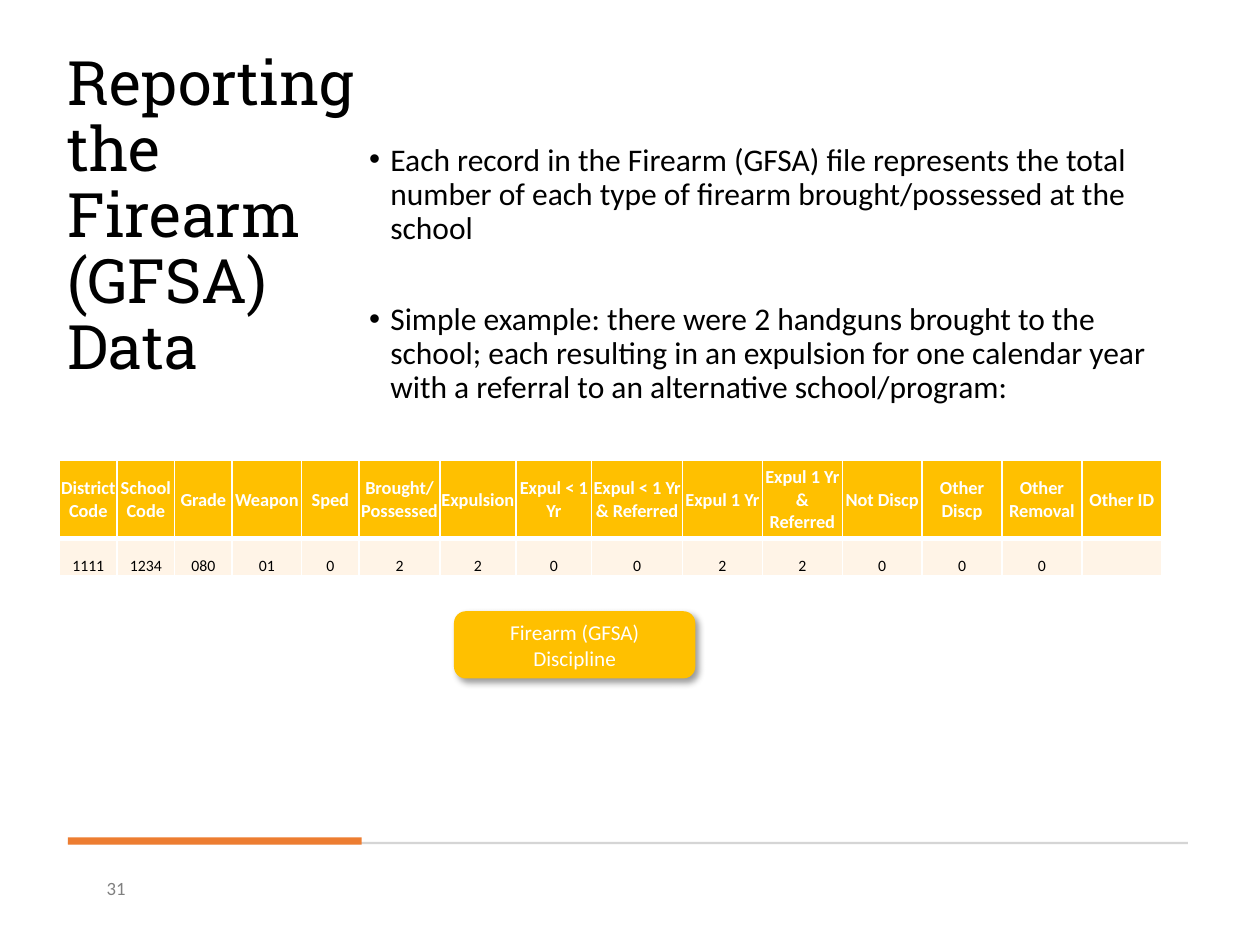
from lxml import etree
from pptx import Presentation
from pptx.dml.color import RGBColor
from pptx.enum.shapes import MSO_SHAPE
from pptx.enum.text import MSO_ANCHOR, PP_ALIGN
from pptx.oxml.ns import qn
from pptx.util import Cm, Pt

RECT, ROUNDED = MSO_SHAPE.RECTANGLE, MSO_SHAPE.ROUNDED_RECTANGLE
TOP, MIDDLE, BOTTOM = MSO_ANCHOR.TOP, MSO_ANCHOR.MIDDLE, MSO_ANCHOR.BOTTOM
LEFT, CENTER = PP_ALIGN.LEFT, PP_ALIGN.CENTER

BLACK = RGBColor(0x00, 0x00, 0x00)
WHITE = RGBColor(0xFF, 0xFF, 0xFF)
GRAY = RGBColor(0x80, 0x80, 0x80)
RULE = RGBColor(0xD5, 0xD5, 0xD5)
ORANGE = RGBColor(0xED, 0x7D, 0x31)
GOLD = RGBColor(0xFF, 0xC0, 0x00)
CREAM = RGBColor(0xFF, 0xF4, 0xE7)

BODY_FONT, TITLE_FONT = "Calibri", "Roboto Slab"

BULLETS = [
    "Each record in the Firearm (GFSA) file represents the total number of "
    "each type of firearm brought/possessed at the school",
    "Simple example: there were 2 handguns brought to the school; each "
    "resulting in an expulsion for one calendar year with a referral to an "
    "alternative school/program:",
]

# Header, value and column width in cm
COLUMNS = [
    ("District Code", "1111", 1.16),
    ("School Code", "1234", 1.16),
    ("Grade", "080", 1.16),
    ("Weapon", "01", 1.4),
    ("Sped", "0", 1.16),
    ("Brought/ Possessed", "2", 1.63),
    ("Expulsion", "2", 1.53),
    ("Expul < 1 Yr", "0", 1.53),
    ("Expul < 1 Yr & Referred", "0", 1.83),
    ("Expul 1 Yr", "2", 1.61),
    ("Expul 1 Yr & Referred", "2", 1.61),
    ("Not Discp", "0", 1.61),
    ("Other Discp", "0", 1.61),
    ("Other Removal", "0", 1.61),
    ("Other ID", "", 1.61),
]


def add_run(p, text, size, color, font=BODY_FONT, bold=False):
    r = p.add_run()
    r.text = text
    r.font.name = font
    r.font.size = Pt(size)
    r.font.bold = bold
    r.font.color.rgb = color


def add_text_box(slide, x, y, w, h, anchor=TOP, margins=None):
    tf = slide.shapes.add_textbox(Cm(x), Cm(y), Cm(w), Cm(h)).text_frame
    tf.word_wrap = True
    tf.vertical_anchor = anchor
    if margins is not None:
        set_margins(tf, *margins)
    return tf


def set_margins(holder, left, top, right, bottom):
    holder.margin_left, holder.margin_top = Cm(left), Cm(top)
    holder.margin_right, holder.margin_bottom = Cm(right), Cm(bottom)


def add_block(slide, kind, x, y, w, h, color):
    sp = slide.shapes.add_shape(kind, Cm(x), Cm(y), Cm(w), Cm(h))
    sp.shadow.inherit = False
    sp.fill.solid()
    sp.fill.fore_color.rgb = color
    sp.line.fill.background()
    return sp


def add_shadow(sp):
    effects = sp._element.spPr.find(qn("a:effectLst"))
    shadow = etree.SubElement(
        effects, qn("a:outerShdw"), blurRad=str(Pt(4)), dist=str(Pt(3)),
        dir="2700000", algn="tl", rotWithShape="0")
    color = etree.SubElement(shadow, qn("a:srgbClr"), val=str(BLACK))
    etree.SubElement(color, qn("a:alpha"), val="40000")


def add_bullets(tf, items):
    for i, item in enumerate(items):
        p = tf.paragraphs[0] if i == 0 else tf.add_paragraph()
        pPr = p._p.get_or_add_pPr()
        pPr.set("marL", str(Cm(0.43)))
        pPr.set("indent", str(-Cm(0.43)))
        etree.SubElement(pPr, qn("a:buFont"), typeface="Arial")
        etree.SubElement(pPr, qn("a:buChar"), char="•")
        p.line_spacing = 0.9
        if i:
            p.space_before = Pt(33)
        add_run(p, item, 18, BLACK)


def set_borders(cell, **widths):
    tcPr = cell._tc.get_or_add_tcPr()
    for side in "LRTB":
        ln = etree.SubElement(tcPr, qn(f"a:ln{side}"),
                              w=str(Pt(widths.get(side, 1))))
        fill = etree.SubElement(ln, qn("a:solidFill"))
        etree.SubElement(fill, qn("a:srgbClr"), val=str(WHITE))


def fill_cell(cell, text, size, color, fill, anchor, bold, borders):
    set_borders(cell, **borders)
    cell.fill.solid()
    cell.fill.fore_color.rgb = fill
    cell.vertical_anchor = anchor
    set_margins(cell, 0.02, 0.02, 0.02, 0)
    p = cell.text_frame.paragraphs[0]
    p.alignment = CENTER
    if text:
        add_run(p, text, size, color, bold=bold)
    else:
        etree.SubElement(p._p, qn("a:endParaRPr"), sz=str(size * 100))


def add_firearm_table(slide, x, y):
    width = sum(col[2] for col in COLUMNS)
    table = slide.shapes.add_table(
        2, len(COLUMNS), Cm(x), Cm(y), Cm(width), Cm(2.33)).table
    table.rows[0].height, table.rows[1].height = Cm(1.57), Cm(0.76)
    for i, (header, value, w) in enumerate(COLUMNS):
        table.columns[i].width = Cm(w)
        fill_cell(table.cell(0, i), header, 10.5, WHITE, GOLD, MIDDLE,
                  True, {"B": 3})
        fill_cell(table.cell(1, i), value, 9, BLACK, CREAM, BOTTOM,
                  False, {"T": 3})


def main():
    prs = Presentation()
    prs.slide_width, prs.slide_height = Cm(25.4), Cm(19.05)
    slide = prs.slides.add_slide(prs.slide_layouts[6])

    # Title
    tf = add_text_box(slide, 1.37, 1.19, 5.92, 6.4, MIDDLE, (0, 0, 0, 0))
    p = tf.paragraphs[0]
    p.line_spacing = 0.9
    add_run(p, "Reporting the Firearm (GFSA) Data", 35, BLACK, TITLE_FONT)

    # Footer rule with accent bar
    add_block(slide, RECT, 1.37, 16.97, 22.58, 0.05, RULE)
    add_block(slide, RECT, 1.37, 16.88, 5.92, 0.15, ORANGE)

    # Explanation
    tf = add_text_box(slide, 7.44, 2.9, 16.48, 9.58, TOP, (0, 0, 0, 0.13))
    add_bullets(tf, BULLETS)

    # Slide number
    tf = add_text_box(slide, 1.9, 17.55, 3.86, 0.69)
    add_run(tf.paragraphs[0], "31", 10.7, GRAY)

    # Example record
    add_firearm_table(slide, 1.2, 9.28)

    # Table label
    sp = add_block(slide, ROUNDED, 9.17, 12.34, 4.83, 1.32, GOLD)
    sp.line.color.rgb = GOLD
    sp.line.width = Pt(1)
    add_shadow(sp)
    tf = sp.text_frame
    tf.word_wrap = True
    tf.vertical_anchor = MIDDLE
    p = tf.paragraphs[0]
    p.alignment = CENTER
    add_run(p, "Firearm (GFSA) Discipline", 12.1, WHITE)

    prs.save("out.pptx")


if __name__ == "__main__":
    main()
